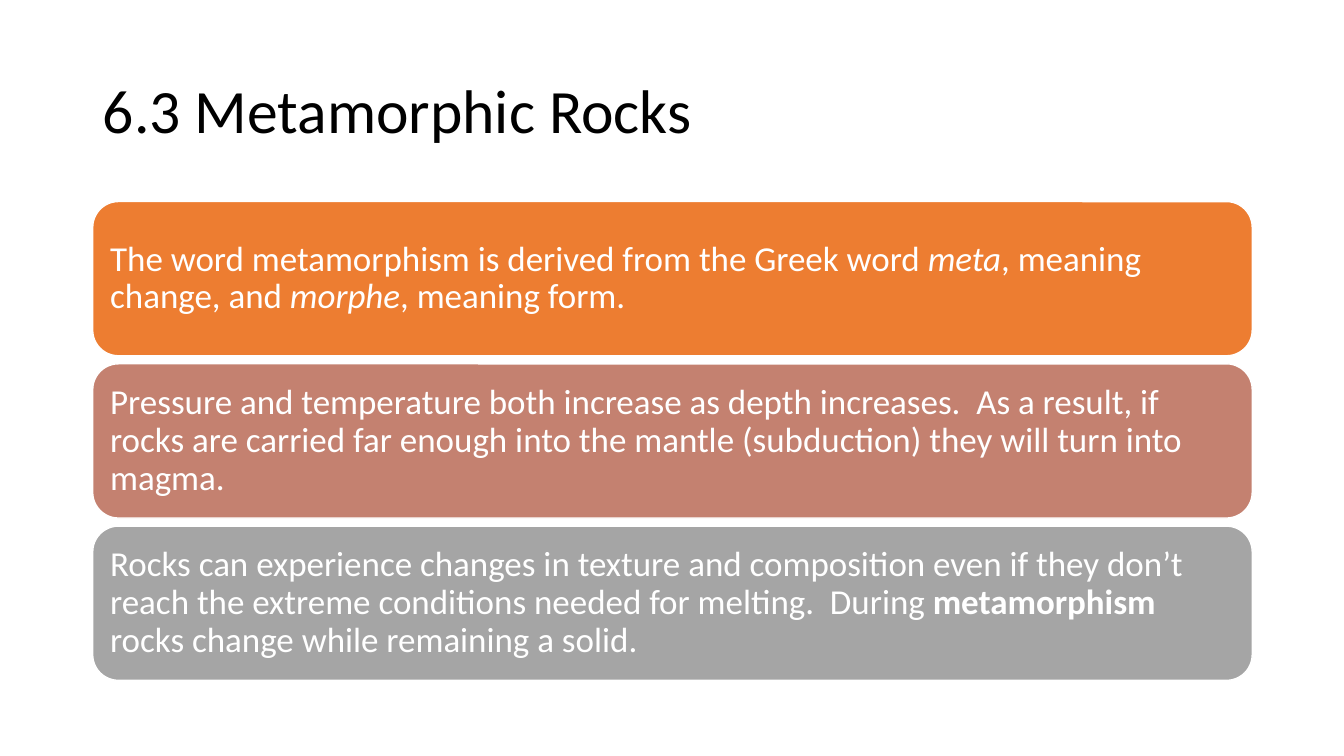
from pptx import Presentation
from pptx import util as u
from pptx.dml import color
from pptx.enum import shapes, text

WIDTH, HEIGHT = u.Inches(13.33), u.Inches(7.5)
LEFT, CONTENT_WIDTH = u.Inches(0.92), u.Inches(11.5)
FIRST_ROW, ROW_STEP, CARD_HEIGHT = u.Inches(2), u.Inches(1.61), u.Inches(1.53)

COLOURS = {
    "black": "000000",
    "white": "FFFFFF",
    "orange": "ED7D31",
    "clay": "C48170",
    "grey": "A5A5A5",
}

TITLE_FONT = {"name": "Calibri", "size": u.Pt(44)}
CARD_FONT = {"name": "Calibri", "size": u.Pt(25)}
PARAGRAPH = {"alignment": text.PP_ALIGN.LEFT, "line_spacing": 0.9}
FRAME = {
    "word_wrap": True,
    "auto_size": text.MSO_AUTO_SIZE.NONE,
    "vertical_anchor": text.MSO_ANCHOR.MIDDLE,
}
CARD_MARGINS = {
    f"margin_{side}": u.Inches(0.1) for side in ("left", "top", "right", "bottom")
}
ITALIC, BOLD = {"italic": True}, {"bold": True}

CARDS = [
    ("orange", [
        ("The word metamorphism is derived from the Greek word ", {}),
        ("meta", ITALIC),
        (", meaning change, and ", {}),
        ("morphe", ITALIC),
        (", meaning form.", {}),
    ]),
    ("clay", [
        ("Pressure and temperature both increase as depth increases.  As a result, "
         "if rocks are carried far enough into the mantle (subduction) they will "
         "turn into magma.", {}),
    ]),
    ("grey", [
        ("Rocks can experience changes in texture and composition even if they "
         "don’t reach the extreme conditions needed for melting.  During ", {}),
        ("metamorphism", BOLD),
        (" rocks change while remaining a solid.", {}),
    ]),
]


def apply_format(target, values):
    for name, value in values.items():
        setattr(target, name, value)


def rgb(name):
    return color.RGBColor.from_string(COLOURS[name])


def write_text(box, spans, font, colour, spacing):
    apply_format(box.text_frame, FRAME)
    para = box.text_frame.paragraphs[0]
    apply_format(para, PARAGRAPH | spacing)
    for words, emphasis in spans:
        span = para.add_run()
        span.text = words
        apply_format(span.font, font | emphasis)
        span.font.color.rgb = rgb(colour)


def add_title(page, words):
    title = page.shapes.title
    apply_format(title, {
        "left": LEFT,
        "top": u.Inches(0.4),
        "width": CONTENT_WIDTH,
        "height": u.Inches(1.45),
    })
    write_text(title, [(words, {})], TITLE_FONT, "black", {})


def add_card(page, row, fill, spans):
    card = page.shapes.add_shape(
        shapes.MSO_SHAPE.ROUNDED_RECTANGLE,
        LEFT, FIRST_ROW + row * ROW_STEP, CONTENT_WIDTH, CARD_HEIGHT,
    )
    card.shadow.inherit = False
    card.fill.solid()
    card.fill.fore_color.rgb = rgb(fill)
    card.line.color.rgb = rgb("white")
    card.line.width = u.Pt(1)
    apply_format(card.text_frame, CARD_MARGINS)
    write_text(card, spans, CARD_FONT, "white", {"space_after": u.Pt(8.75)})


def main():
    deck = Presentation()
    apply_format(deck, {"slide_width": WIDTH, "slide_height": HEIGHT})
    page = deck.slides.add_slide(deck.slide_layouts.get_by_name("Title Only"))
    add_title(page, "6.3 Metamorphic Rocks")
    for row, (fill, spans) in enumerate(CARDS):
        add_card(page, row, fill, spans)
    deck.save("out.pptx")


if __name__ == "__main__":
    main()
